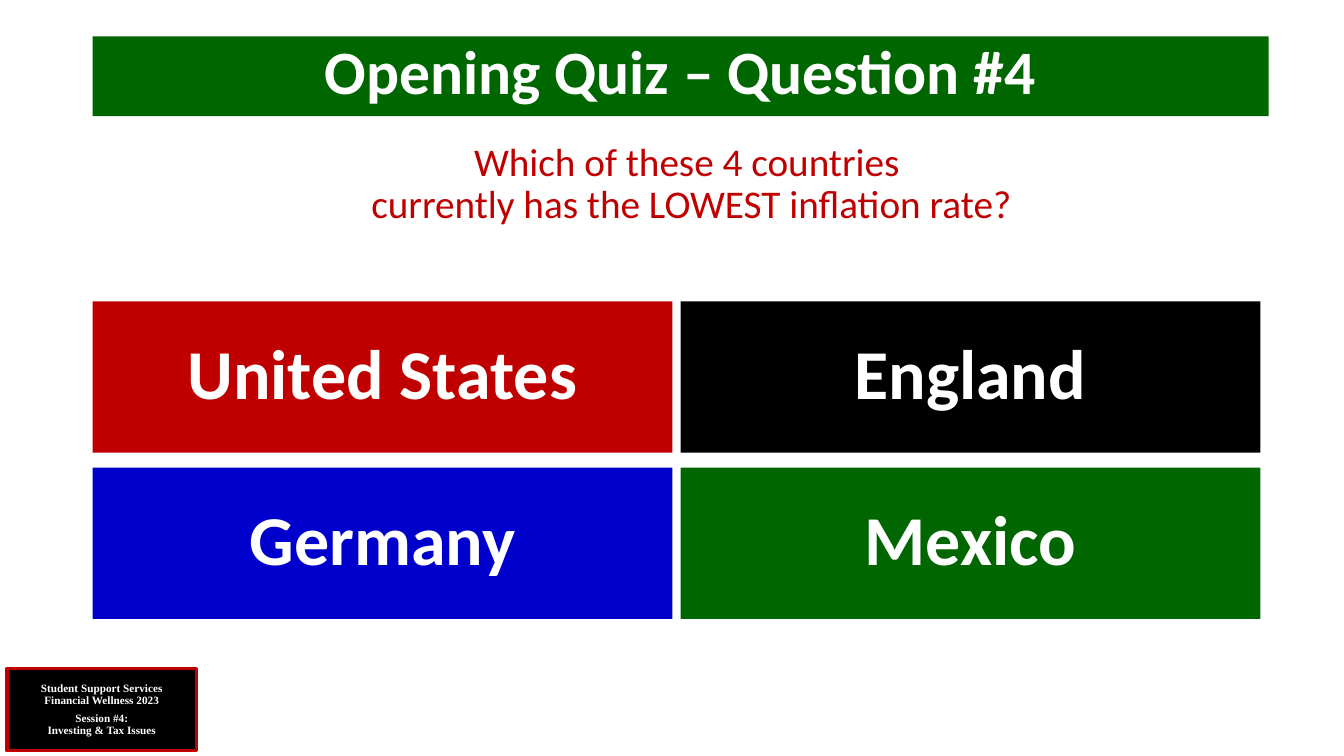
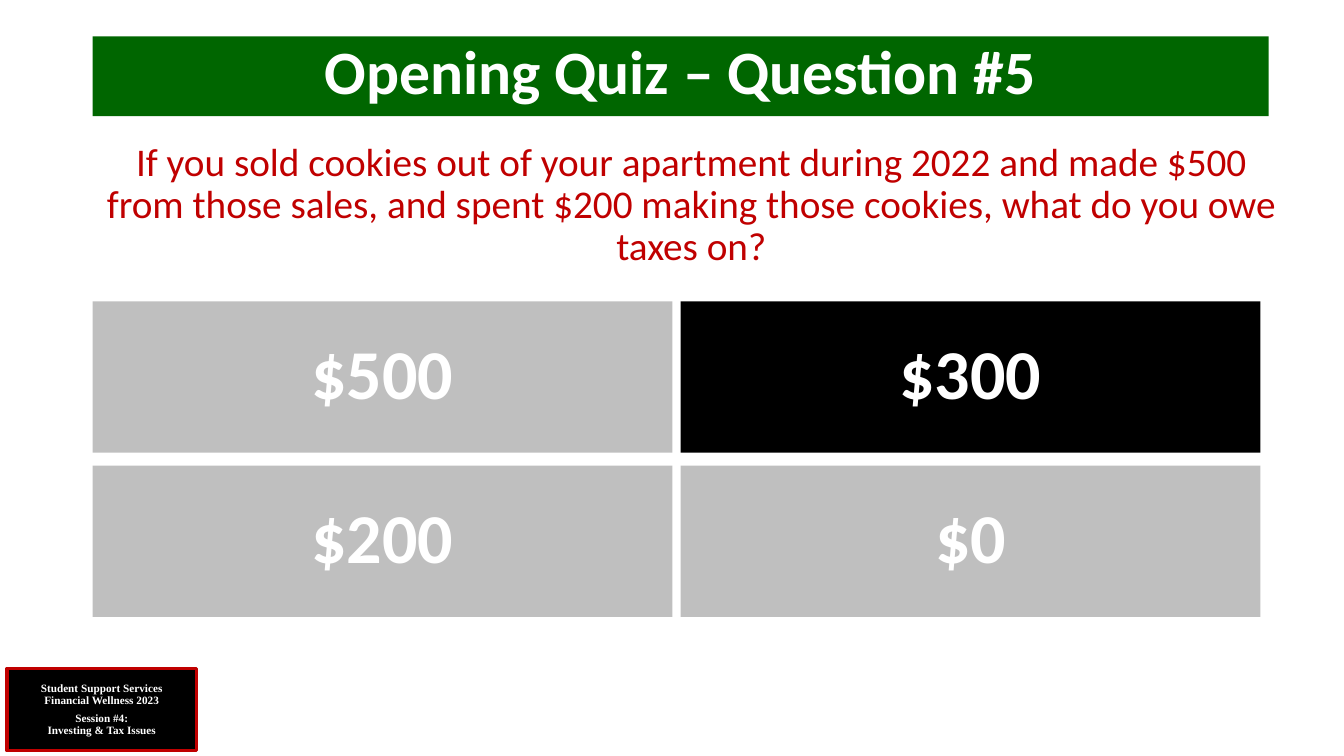
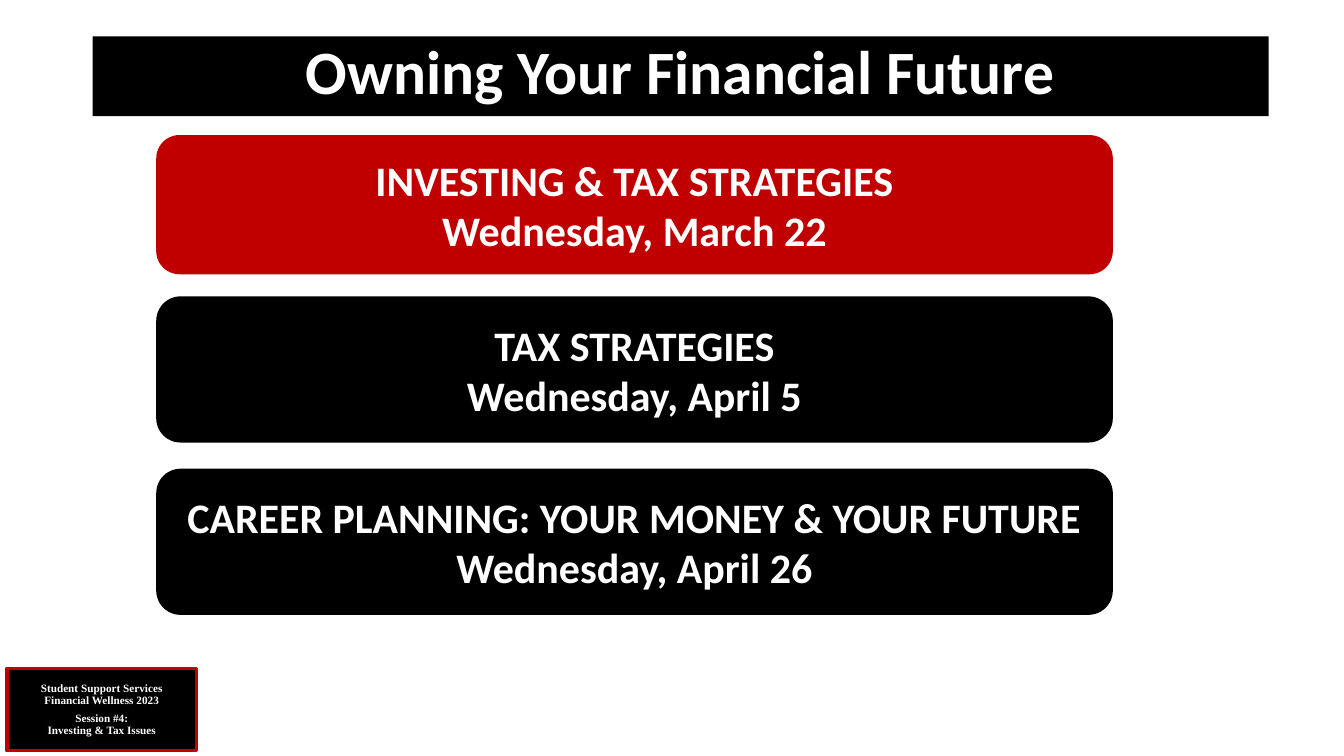
"""Build two quiz slides and a session schedule on a shared master."""
import copy

from lxml import etree
from pptx import Presentation
from pptx.dml.color import RGBColor
from pptx.enum import shapes, text
from pptx.oxml.ns import qn
from pptx.util import Pt

COLORS = {"green": "006600", "red": "C00000", "blue": "0000CC",
          "black": "000000", "gray": "BFBFBF", "white": "FFFFFF"}
LEFT = 66.24
TILE_W, TILE_H, TILE_TOP, TILE_STEP = 414, 108, 215.28, 420


def write(sp, words, size, color="white", bold=True, name="Calibri",
          spacing=0.9, anchor=text.MSO_ANCHOR.MIDDLE):
    tf = sp.text_frame
    tf.text = words
    tf.word_wrap = True
    tf.auto_size = text.MSO_AUTO_SIZE.NONE
    tf.vertical_anchor = anchor
    for p in tf.paragraphs:
        p.alignment = text.PP_ALIGN.CENTER
        p.line_spacing = spacing
        p.space_before = Pt(0)
        for r in p.runs:
            r.font.name = name
            r.font.size = Pt(size)
            r.font.bold = bold
            r.font.color.rgb = RGBColor.from_string(COLORS[color])
        for br in p._p.findall(qn("a:br")):
            br.append(copy.deepcopy(p.runs[0]._r.rPr))


def place(sp, left, top, width, height, fill=None):
    sp.left, sp.top, sp.width, sp.height = Pt(left), Pt(top), Pt(width), Pt(height)
    if fill:
        sp.fill.solid()
        sp.fill.fore_color.rgb = RGBColor.from_string(COLORS[fill])
        sp.line.fill.background()
    return sp


prs = Presentation()
prs.slide_width, prs.slide_height = Pt(960), Pt(540)

quizzes = [
    ("Opening Quiz – Question #4",
     "Which of these 4 countries \vcurrently has the LOWEST inflation rate?", 118.8,
     [("United States", "red"), ("England", "black"),
      ("Germany", "blue"), ("Mexico", "green")]),
    ("Opening Quiz – Question #5",
     "If you sold cookies out of your apartment during 2022 and made $500 from those "
     "sales, and spent $200 making those cookies, what do you owe taxes on?", 117.36,
     [("$500", "gray"), ("$300", "black"), ("$200", "gray"), ("$0", "gray")]),
]
sessions = [
    ("INVESTING & TAX STRATEGIES\nWednesday, March 22", 96.5, 99.4, "red"),
    ("TAX STRATEGIES\nWednesday, April 5", 211.7, 104.4, "black"),
    ("CAREER PLANNING: YOUR MONEY & YOUR FUTURE\nWednesday, April 26", 334.8, 104.4, "black"),
]

for title, question, row_step, answers in quizzes:
    s = prs.slides.add_slide(prs.slide_layouts[1])
    write(s.shapes.title, title, 44, anchor=text.MSO_ANCHOR.TOP)
    place(s.shapes.title, LEFT, 26, 840, 57, "green")

    body = place(s.placeholders[1], LEFT, 98, 855, 389)
    write(body, question, 28, "red", bold=False, anchor=text.MSO_ANCHOR.TOP)
    pPr = body.text_frame.paragraphs[0]._p.get_or_add_pPr()
    pPr.set("marL", "0")
    pPr.set("indent", "0")
    etree.SubElement(pPr, qn("a:buNone"))

    for i, (answer, fill) in enumerate(answers):
        row, col = divmod(i, 2)
        sp = s.shapes.add_shape(shapes.MSO_SHAPE.RECTANGLE, 0, 0, 0, 0)
        sp.shadow.inherit = False
        place(sp, LEFT + col * TILE_STEP, TILE_TOP + row * row_step, TILE_W, TILE_H, fill)
        write(sp, answer, 50)

s = prs.slides.add_slide(prs.slide_layouts[5])
write(s.shapes.title, "Owning Your Financial Future", 44, anchor=text.MSO_ANCHOR.TOP)
place(s.shapes.title, LEFT, 26, 840, 57, "black")
for words, top, height, fill in sessions:
    sp = s.shapes.add_shape(shapes.MSO_SHAPE.ROUNDED_RECTANGLE, 0, 0, 0, 0)
    sp.shadow.inherit = False
    place(sp, 111.6, top, 683.3, height, fill)
    write(sp, words, 30, spacing=1.0)

badge = s.shapes.add_shape(shapes.MSO_SHAPE.RECTANGLE, 0, 0, 0, 0)
badge.shadow.inherit = False
place(badge, 5, 477.4, 135.4, 59, "black")
badge.line.color.rgb = RGBColor.from_string(COLORS["red"])
badge.line.width = Pt(2.25)
write(badge, "Student Support Services\nFinancial Wellness 2023\n"
      "Session #4:\vInvesting & Tax Issues", 8, name="Times New Roman")
badge.text_frame.paragraphs[2].space_before = Pt(4.4)
badge.element.nvSpPr.cNvPr.set("id", "20")
prs.slide_master.shapes.element.append(badge.element)

prs.save("out.pptx")
